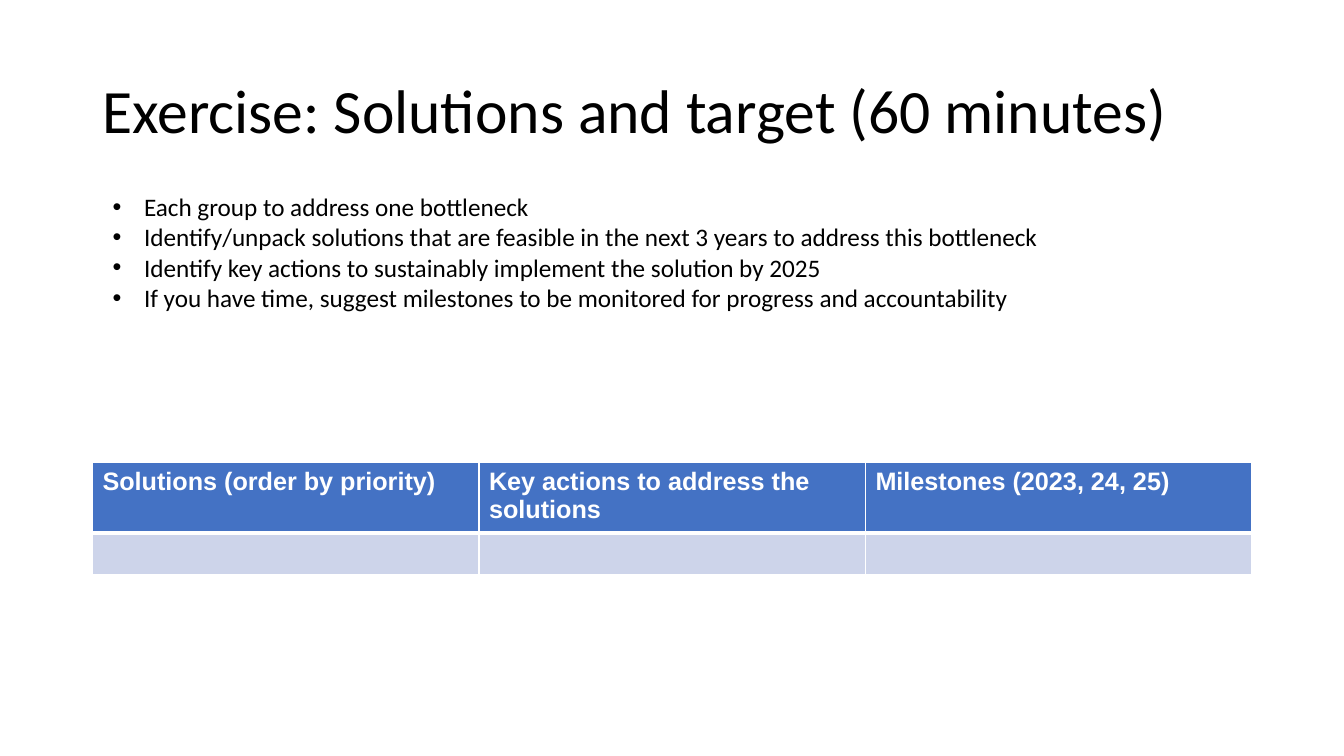
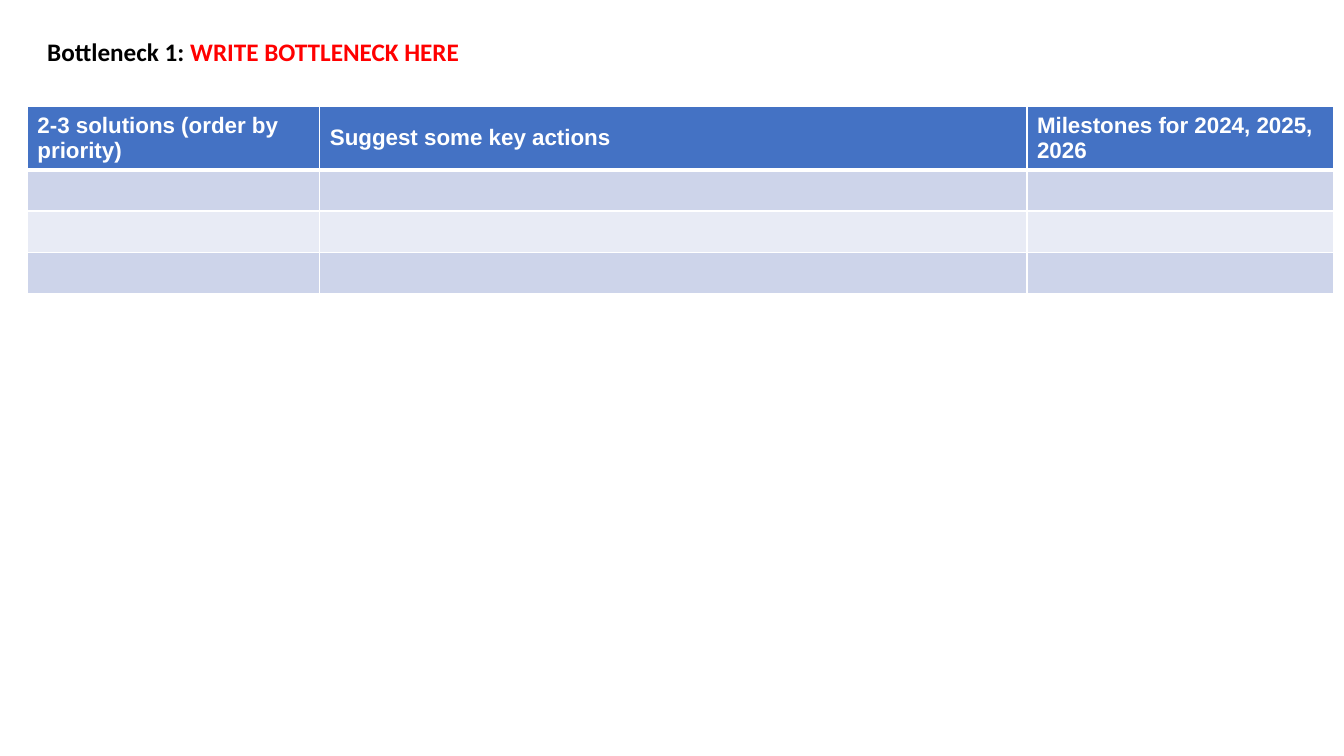
import lxml.etree
import pptx
import pptx.dml.color
import pptx.enum.text
import pptx.oxml.ns
import pptx.util

Cm = pptx.util.Cm
Pt = pptx.util.Pt
qn = pptx.oxml.ns.qn
MIDDLE = pptx.enum.text.MSO_ANCHOR.MIDDLE
TOP = pptx.enum.text.MSO_ANCHOR.TOP

BLACK, WHITE, RED = "000000", "FFFFFF", "FF0000"
HEADER_FILL = "4472C4"
BAND_FILLS = ["CDD4EA", "E8EBF5"]
ROW_HEIGHT = Cm(1.04)
BULLET_INDENT = Cm(0.79)

HEADING = {"name": "Calibri", "size": Pt(44)}
BODY = {"name": "Calibri", "size": Pt(18)}
LABEL = {"name": "Calibri", "size": Pt(18), "bold": True}


def add_text(slide, box, paragraphs, font, anchor=TOP, spacing=None):
    """Add a text box; each paragraph is a list of (text, colour) runs."""
    frame = slide.shapes.add_textbox(*map(Cm, box)).text_frame
    frame.word_wrap = True
    frame.vertical_anchor = anchor
    for index, runs in enumerate(paragraphs):
        paragraph = frame.paragraphs[0] if index == 0 else frame.add_paragraph()
        paragraph.line_spacing = spacing
        for text, color in runs:
            run = paragraph.add_run()
            run.text = text
            for key, value in font.items():
                setattr(run.font, key, value)
            run.font.color.rgb = pptx.dml.color.RGBColor.from_string(color)
    return frame


def add_worksheet(slide, left, top, widths, headers, body_rows, size, anchor):
    """Add a header row over empty banded rows for the group to fill in."""
    grid = slide.shapes.add_table(
        body_rows + 1, len(widths), Cm(left), Cm(top),
        Cm(sum(widths)), ROW_HEIGHT * (body_rows + 1)).table
    for column, width in zip(grid.columns, widths):
        column.width = Cm(width)
    for row in range(body_rows + 1):
        for column, header in enumerate(headers):
            cell = grid.cell(row, column)
            properties = cell._tc.get_or_add_tcPr()
            for side in ("lnL", "lnR", "lnT", "lnB"):
                thick = (row, side) in ((0, "lnB"), (1, "lnT"))
                border = lxml.etree.SubElement(
                    properties, qn("a:" + side), w=str(Pt(3 if thick else 1)))
                paint = lxml.etree.SubElement(border, qn("a:solidFill"))
                lxml.etree.SubElement(paint, qn("a:srgbClr"), val=WHITE)
            fill = HEADER_FILL if row == 0 else BAND_FILLS[(row - 1) % 2]
            cell.fill.solid()
            cell.fill.fore_color.rgb = pptx.dml.color.RGBColor.from_string(fill)
            if row == 0:
                cell.vertical_anchor = anchor
                run = cell.text_frame.paragraphs[0].add_run()
                run.text = header
                header_font = {"name": "Arial", "size": Pt(size), "bold": True}
                for key, value in header_font.items():
                    setattr(run.font, key, value)
                run.font.color.rgb = pptx.dml.color.RGBColor.from_string(WHITE)


deck = pptx.Presentation()
deck.slide_width = Cm(33.87)
deck.slide_height = Cm(19.05)
blank = deck.slide_layouts[6]

# Exercise instructions
exercise = deck.slides.add_slide(blank)
add_text(exercise, (2.33, 1.02, 29.21, 3.68),
         [[("Exercise: Solutions and target (60 minutes)", BLACK)]],
         HEADING, MIDDLE, 0.9)
add_worksheet(exercise, 2.33, 11.66, [9.74] * 3,
              ["Solutions (order by priority)",
               "Key actions to address the solutions",
               "Milestones (2023, 24, 25)"], 1, 18, TOP)
tasks = [
    "Each group to address one bottleneck",
    "Identify/unpack solutions that are feasible in the next 3 years to address this bottleneck",
    "Identify key actions to sustainably implement the solution by 2025",
    "If you have time, suggest milestones to be monitored for progress and accountability",
]
instructions = add_text(exercise, (2.59, 4.7, 29.21, 4.11),
                        [[(task, BLACK)] for task in tasks], BODY)
for paragraph in instructions.paragraphs:
    properties = paragraph._p.get_or_add_pPr()
    properties.set("marL", str(BULLET_INDENT))
    properties.set("indent", str(-BULLET_INDENT))
    lxml.etree.SubElement(properties, qn("a:buFont"), typeface="Arial")
    lxml.etree.SubElement(properties, qn("a:buChar"), char="•")

# Group worksheet
worksheet = deck.slides.add_slide(blank)
add_worksheet(worksheet, 0.69, 2.67, [7.37, 17.82, 7.72],
              ["2-3 solutions (order by priority)",
               "Suggest some key actions",
               "Milestones for 2024, 2025, 2026"], 3, 16, MIDDLE)
add_text(worksheet, (0.94, 0, 32.5, 2.67),
         [[("Bottleneck 1: ", BLACK), ("WRITE BOTTLENECK HERE", RED)]],
         LABEL, MIDDLE, 0.9)

deck.save("out.pptx")
